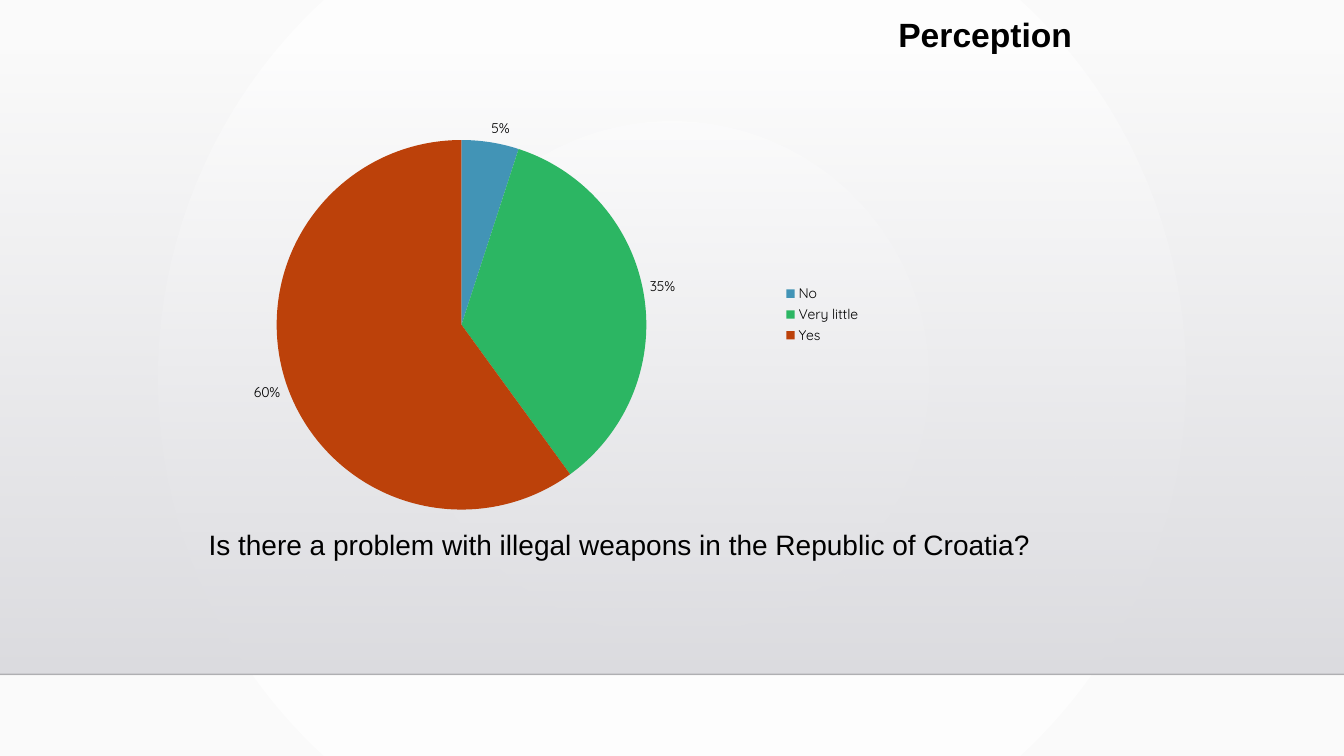
from lxml import etree
from pptx import Presentation
from pptx.chart.data import CategoryChartData
from pptx.dml.color import RGBColor
from pptx.enum.chart import XL_CHART_TYPE as ChartType
from pptx.enum.chart import XL_LABEL_POSITION as LabelPosition
from pptx.enum.chart import XL_LEGEND_POSITION as LegendPosition
from pptx.enum.shapes import MSO_CONNECTOR as Connector
from pptx.enum.shapes import MSO_SHAPE as Shape
from pptx.enum.text import MSO_ANCHOR as Anchor
from pptx.enum.text import MSO_AUTO_SIZE as AutoSize
from pptx.enum.text import PP_ALIGN as Align
from pptx.oxml import parse_xml
from pptx.oxml.ns import nsdecls, qn
from pptx.util import Inches, Pt

BLACK = RGBColor(0x00, 0x00, 0x00)
RULE = RGBColor(0x00, 0x00, 0x01)
WHITE = RGBColor(0xFF, 0xFF, 0xFF)
PALE = RGBColor(0xFA, 0xFA, 0xFA)
MIST_TOP = RGBColor(0xDC, 0xDC, 0xE0)
MIST_BOTTOM = RGBColor(0xDE, 0xDE, 0xE2)
BLUE = RGBColor(0x42, 0x94, 0xB6)
GREEN = RGBColor(0x2C, 0xB6, 0x63)
RUST = RGBColor(0xBC, 0x41, 0x0A)

ANSWERS = [("No", 5, BLUE), ("Very little", 35, GREEN), ("Yes", 60, RUST)]
SLIDE_WIDTH = 13.33
BAND_TOP, BAND_HEIGHT = 0.51, 6.18


def set_opacity(color_element, percent):
    alpha = etree.SubElement(color_element, qn("a:alpha"))
    alpha.set("val", str(percent * 1000))


def set_gradient(fill, first, last):
    fill.gradient()
    for stop, color in zip(fill.gradient_stops, (first, last)):
        stop.color.rgb = color
    fill.gradient_stops[0].position = 0
    fill.gradient_stops[1].position = 1


def paint_background(slide):
    set_gradient(slide.background.fill, WHITE, PALE)
    gradient = next(slide.background._cSld.iter(qn("a:gradFill")))
    gradient.replace(gradient.find(qn("a:lin")), parse_xml(
        f'<a:path {nsdecls("a")} path="circle">'
        '<a:fillToRect l="50000" t="50000" r="50000" b="50000"/></a:path>'))


def add_band(slide):
    band = slide.shapes.add_shape(
        Shape.RECTANGLE, 0, Inches(BAND_TOP), Inches(SLIDE_WIDTH), Inches(BAND_HEIGHT))
    band.shadow.inherit = False
    band.line.fill.background()
    set_gradient(band.fill, MIST_TOP, MIST_BOTTOM)
    band.fill.gradient_angle = 270
    set_opacity(next(band._element.spPr.iter(qn("a:srgbClr"))), 0)


def add_rule(slide):
    y = Inches(BAND_TOP + BAND_HEIGHT)
    rule = slide.shapes.add_connector(Connector.STRAIGHT, 0, y, Inches(SLIDE_WIDTH), y)
    rule.line.color.rgb = RULE
    rule.line.width = Pt(1)
    properties = rule._element.spPr
    set_opacity(next(properties.iter(qn("a:srgbClr"))), 20)
    etree.SubElement(properties, qn("a:effectLst"))


def style_font(font, name, size, bold=False):
    font.name = name
    font.size = Pt(size)
    font.bold = bold
    font.color.rgb = BLACK


def write_text(box, text, size, bold=False, wrap=True):
    frame = box.text_frame
    frame.text = text
    frame.word_wrap = wrap
    frame.auto_size = AutoSize.SHAPE_TO_FIT_TEXT
    frame.vertical_anchor = Anchor.TOP
    paragraph = frame.paragraphs[0]
    paragraph.alignment = Align.LEFT
    style_font(paragraph.font, "Arial", size, bold)


def add_title(slide):
    title = slide.shapes.title
    title.left, title.top = Inches(8.81), Inches(0.09)
    title.width, title.height = Inches(1.94), Inches(0.5)
    write_text(title, "Perception", 24, bold=True, wrap=False)


def add_question(slide):
    question = slide.shapes.add_textbox(
        Inches(1.97), Inches(5.18), Inches(8.94), Inches(0.44))
    write_text(question,
               "Is there a problem with illegal weapons in the Republic of Croatia?", 20)


def place_plot(chart, x, y, width, height):
    plot_area = chart._chartSpace.chart.plotArea
    for layout in plot_area.findall(qn("c:layout")):
        plot_area.remove(layout)
    plot_area.insert(0, parse_xml(
        f'<c:layout {nsdecls("c")}><c:manualLayout><c:layoutTarget val="inner"/>'
        '<c:xMode val="edge"/><c:yMode val="edge"/>'
        f'<c:x val="{x}"/><c:y val="{y}"/><c:w val="{width}"/><c:h val="{height}"/>'
        '</c:manualLayout></c:layout>'))


def add_answer_pie(slide):
    data = CategoryChartData()
    data.categories = [answer for answer, _, _ in ANSWERS]
    data.add_series("Series 1", [share for _, share, _ in ANSWERS])
    chart = slide.shapes.add_chart(
        ChartType.PIE, Inches(1.45), Inches(1.06), Inches(7.19), Inches(4.12), data).chart
    chart.has_title = False
    style_font(chart.font, "Quicksand", 10)
    place_plot(chart, 0.18, 0.08, 0.51, 0.89)

    chart.has_legend = True
    chart.legend.position = LegendPosition.RIGHT
    chart.legend.include_in_layout = False
    style_font(chart.legend.font, "Quicksand", 10)

    plot = chart.plots[0]
    plot.vary_by_categories = True
    for index, (_, _, color) in enumerate(ANSWERS):
        slice_fill = plot.series[0].points[index].format.fill
        slice_fill.solid()
        slice_fill.fore_color.rgb = color

    plot.has_data_labels = True
    labels = plot.data_labels
    labels.show_percentage = True
    labels.show_value = False
    labels.number_format = "0%"
    labels.number_format_is_linked = False
    labels.position = LabelPosition.OUTSIDE_END
    style_font(labels.font, "Quicksand", 10)


def main():
    deck = Presentation()
    deck.slide_width, deck.slide_height = Inches(SLIDE_WIDTH), Inches(7.5)
    slide = deck.slides.add_slide(deck.slide_layouts.get_by_name("Title Only"))
    paint_background(slide)
    add_band(slide)
    add_rule(slide)
    add_title(slide)
    add_answer_pie(slide)
    add_question(slide)
    deck.save("out.pptx")


if __name__ == "__main__":
    main()
